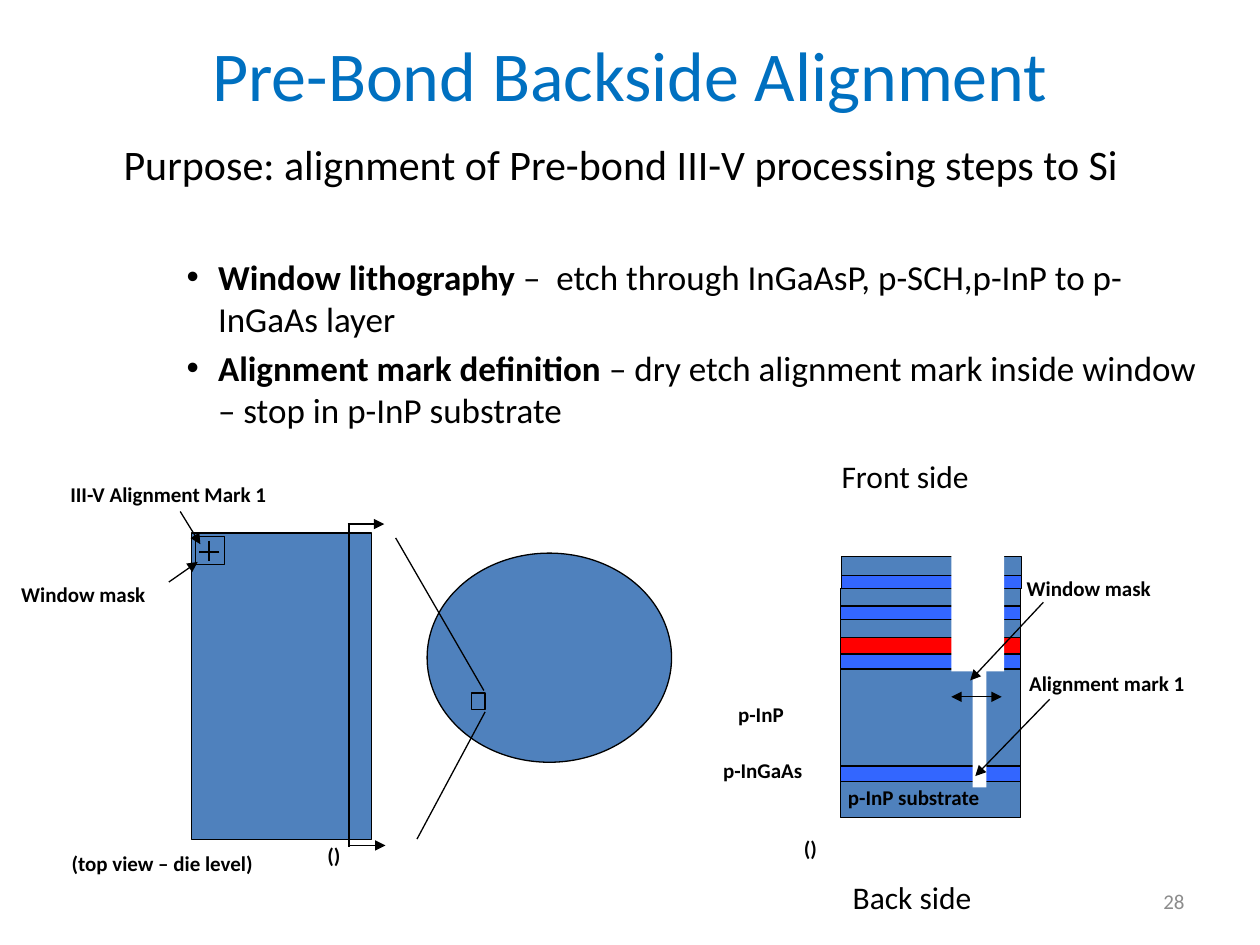
import itertools

import lxml.etree
import pptx
import pptx.dml.color
import pptx.enum.shapes
import pptx.enum.text
import pptx.oxml.ns
import pptx.util

Pt = pptx.util.Pt
RGBColor = pptx.dml.color.RGBColor
SHAPE = pptx.enum.shapes.MSO_SHAPE
ALIGN = pptx.enum.text.PP_ALIGN
ANCHOR = pptx.enum.text.MSO_ANCHOR
FIT = pptx.enum.text.MSO_AUTO_SIZE
qn = pptx.oxml.ns.qn

BLACK = RGBColor(0, 0, 0)
WHITE = RGBColor(255, 255, 255)
TITLE_BLUE = RGBColor(0x00, 0x70, 0xC0)
GRAY = RGBColor(0x8C, 0x8C, 0x8C)
STEEL = RGBColor(0x4F, 0x81, 0xBD)
BLUE = RGBColor(0x33, 0x66, 0xFF)
RED = RGBColor(0xFF, 0, 0)


def place(box, left, top, width, height):
    """Move and size a placeholder."""
    box.left, box.top, box.width, box.height = map(Pt, (left, top, width, height))


def add_run(paragraph, text, size, color=BLACK, bold=False):
    """Append one formatted run."""
    run = paragraph.add_run()
    run.text = text
    run.font.name = "Calibri"
    run.font.size = Pt(size)
    run.font.bold = bold
    run.font.color.rgb = color


def add_label(slide, text, left, top, width, height=21.6, size=12, bold=True,
              color=BLACK, align=ALIGN.LEFT):
    """Add a one-line text box."""
    label = slide.shapes.add_textbox(*map(Pt, (left, top, width, height)))
    frame = label.text_frame
    frame.word_wrap = True
    frame.auto_size = FIT.SHAPE_TO_FIT_TEXT
    frame.paragraphs[0].alignment = align
    add_run(frame.paragraphs[0], text, size, color, bold)
    return label


def add_area(slide, left, top, width, height, fill=STEEL, kind=SHAPE.RECTANGLE,
             outlined=True):
    """Add a filled shape, with a thin black outline if wanted."""
    area = slide.shapes.add_shape(kind, *map(Pt, (left, top, width, height)))
    area.shadow.inherit = False
    area.fill.solid()
    area.fill.fore_color.rgb = fill
    if outlined:
        area.line.color.rgb = BLACK
        area.line.width = Pt(0.75)
    else:
        area.line.fill.background()


def add_line(slide, x1, y1, x2, y2, ends=()):
    """Add a thin black line with triangles at the given ends."""
    line = slide.shapes.add_connector(
        pptx.enum.shapes.MSO_CONNECTOR.STRAIGHT, *map(Pt, (x1, y1, x2, y2)))
    line.line.color.rgb = BLACK
    line.line.width = Pt(0.75)
    properties = line.line._get_or_add_ln()
    for end in ends:
        lxml.etree.SubElement(properties, qn(f"a:{end}"), type="triangle")
    lxml.etree.SubElement(line._element.spPr, qn("a:effectLst"))


def add_point(paragraph, level, margin, indent, before, bullet, runs):
    """Fill one body paragraph."""
    paragraph.level = level
    paragraph.space_before = Pt(before)
    properties = paragraph._p.get_or_add_pPr()
    properties.set("marL", str(Pt(margin)))
    properties.set("indent", str(Pt(indent)))
    if bullet:
        lxml.etree.SubElement(properties, qn("a:buChar"), char=bullet)
    else:
        lxml.etree.SubElement(properties, qn("a:buNone"))
    for text, size, bold in runs:
        add_run(paragraph, text, size, bold=bold)


def add_wording(slide):
    """Fill the title and the body."""
    title = slide.shapes.title
    place(title, 36, 10.8, 648, 62.6)
    title.text_frame.vertical_anchor = ANCHOR.MIDDLE
    heading = title.text_frame.paragraphs[0]
    heading.alignment = ALIGN.CENTER
    add_run(heading, "Pre-Bond Backside Alignment", 40, TITLE_BLUE)

    body = slide.placeholders[1]
    place(body, 27.4, 75.6, 668.2, 386.6)
    frame = body.text_frame
    frame.auto_size = FIT.NONE
    add_point(frame.paragraphs[0], 1, 58.5, -22.5, 4.8, None, [
        ("Purpose: alignment of Pre-bond III-V processing steps to Si", 24, False)])
    steps = [
        ("Window lithography",
         " –  etch through InGaAsP, p-SCH,p-InP to p-InGaAs layer", 38),
        ("Alignment mark definition",
         " – dry etch alignment mark inside window – stop in p-InP substrate", 4),
    ]
    for name, detail, before in steps:
        add_point(frame.add_paragraph(), 2, 90, -18, before, "•",
                  [(name, 20, True), (detail, 20, False)])


def add_top_view(slide):
    """Draw the die, the wafer and the section marks."""
    add_area(slide, 109.4, 304.6, 103, 175)
    add_area(slide, 244.1, 316.1, 139.7, 119.5, kind=SHAPE.OVAL)
    add_area(slide, 269.3, 396, 7.9, 9.4)
    add_area(slide, 111.6, 306.7, 16.6, 15.8)
    for ends in [(276.5, 394.6, 226.1, 307.4), (277.2, 406.8, 238.3, 479.5),
                 (119.5, 308.9, 119.5, 320.4), (125.3, 315.4, 113.8, 315.4),
                 (199.4, 299.5, 199.4, 483.8)]:
        add_line(slide, *ends)
    for arrow in [(96.5, 332.6, 113, 321.1), (103, 292.3, 114.5, 311),
                  (199.4, 483.1, 220.3, 483.1), (198.7, 299.5, 219.6, 299.5)]:
        add_line(slide, *arrow, ends=["tailEnd"])
    add_label(slide, "(top view – die level)", 33.8, 482.4, 164.9)
    add_label(slide, "Window mask", 5, 329, 114.5)
    add_label(slide, "III-V Alignment Mark 1", 33.1, 271.4, 158.4)
    add_label(slide, "()", 180, 478.1, 164.9)


def add_cross_section(slide):
    """Draw the layer stack with the etched window and mark."""
    edges = [318.2, 329, 336.2, 346.3, 354.2, 364.3, 373.7, 382.3, 437.8, 446.4, 467.3]
    fills = [STEEL, BLUE, STEEL, BLUE, STEEL, RED, BLUE, STEEL, BLUE, STEEL]
    layers = list(zip(itertools.pairwise(edges), fills))
    for index, ((top, bottom), fill) in reversed(list(enumerate(layers))):
        left = 480.9 if index < 2 else 480.2
        add_area(slide, left, top, 103, bottom - top, fill)
    add_area(slide, 543.6, 311, 30.2, 72.7, WHITE, outlined=False)
    add_area(slide, 555.8, 372.2, 7.9, 77.8, WHITE, outlined=False)
    add_line(slide, 599.8, 399.6, 557.3, 443.5, ["tailEnd"])
    add_line(slide, 596.2, 344.2, 554.4, 388.8, ["tailEnd"])
    add_line(slide, 543.6, 398.2, 572.4, 398.2, ["headEnd", "tailEnd"])
    for text, left, top, width in [
            ("()", 452.2, 473.8, 164.9),
            ("Window mask", 579.6, 325.4, 114.5),
            ("Alignment mark 1", 581, 379.4, 126.7),
            ("p-InP substrate", 477.4, 445, 108.7),
            ("p-InGaAs", 406.1, 429.1, 82.1),
            ("p-InP", 414.7, 397.4, 82.1)]:
        add_label(slide, text, left, top, width)
    add_label(slide, "Front side", 473.8, 257.8, 144, 30.2, 18, False)
    add_label(slide, "Back side", 480.2, 498.2, 144, 30.2, 18, False)


def main():
    """Build and save the slide."""
    deck = pptx.Presentation()
    deck.slide_width, deck.slide_height = Pt(720), Pt(540)
    slide = deck.slides.add_slide(deck.slide_layouts[1])
    add_wording(slide)
    add_top_view(slide)
    add_cross_section(slide)
    number = add_label(slide, "28", 516.2, 500.4, 167.8, 28.8, 12, False, GRAY,
                       ALIGN.RIGHT)
    number.text_frame.auto_size = FIT.NONE
    number.text_frame.vertical_anchor = ANCHOR.MIDDLE
    deck.save("out.pptx")


if __name__ == "__main__":
    main()
